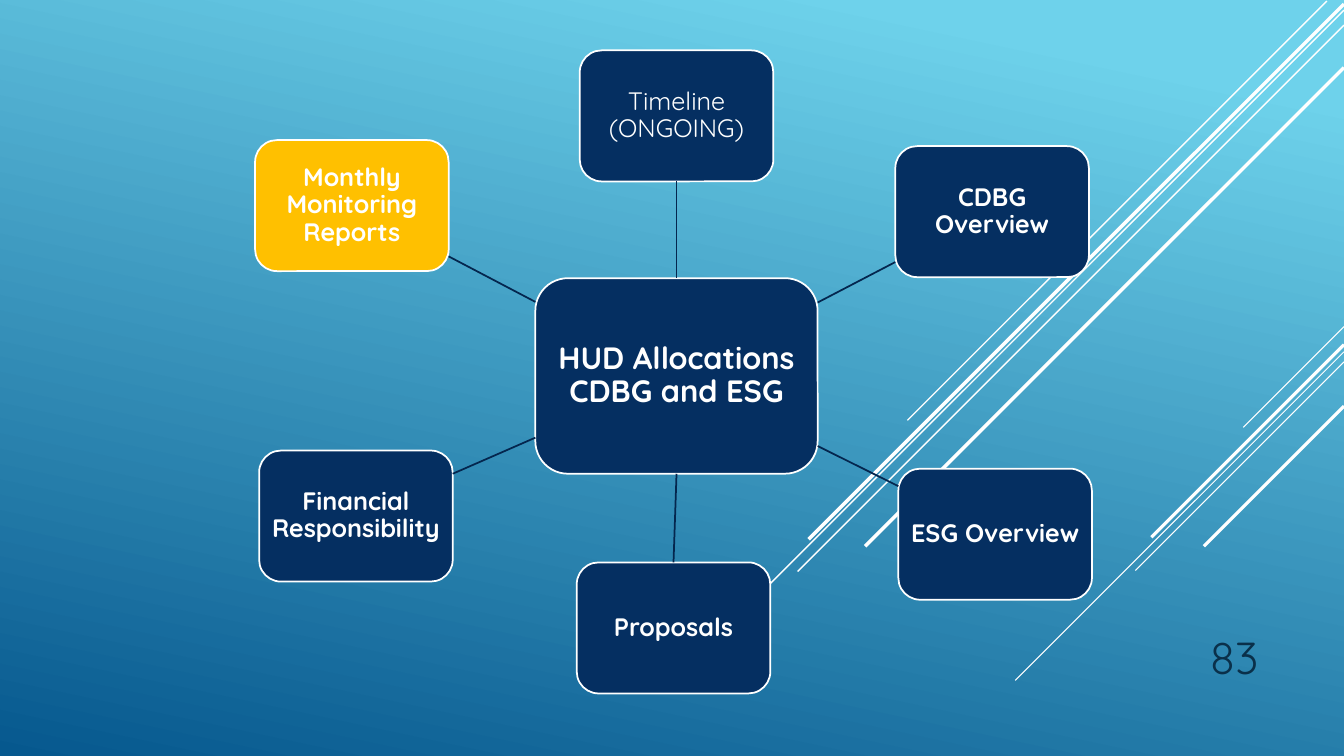
import pptx
import pptx.util
import pptx.dml.color
import pptx.enum.shapes
import pptx.enum.text
import pptx.oxml.ns
import lxml.etree

Inches, Pt = pptx.util.Inches, pptx.util.Pt
THEME = {
    "font": "Quicksand", "white": "FFFFFF", "navy": "052F61", "gold": "FFC000",
    "spoke": "04264E", "number": "0A304A", "sky": "6ED2EB", "deep": "06588E",
    "hub_size": 22, "topic_size": 18, "number_size": 32, "outline": 1.25,
}


def color(name):
    return pptx.dml.color.RGBColor.from_string(THEME[name])


def add_line(start, end, color_name, weight):
    line = page.shapes.add_connector(
        pptx.enum.shapes.MSO_CONNECTOR.STRAIGHT,
        *[Inches(length) for length in (*start, *end)])
    line.line.color.rgb = color(color_name)
    line.line.width = Pt(weight)
    lxml.etree.SubElement(line._element.spPr, pptx.oxml.ns.qn("a:effectLst"))
    return line


deck = pptx.Presentation()
deck.slide_width, deck.slide_height = Inches(13.33), Inches(7.5)
page = deck.slides.add_slide(deck.slide_layouts[6])

# Background gradient
backdrop = page.background.fill
backdrop.gradient()
backdrop.gradient_angle = 258
for stop, (position, name) in zip(backdrop.gradient_stops, [(0.1, "sky"), (1, "deep")]):
    stop.position = position
    stop.color.rgb = color(name)

# Diagonal rays, all falling at 45 degrees: right end x, y, drop, weight
rays = [
    (13.33, 3.24, 1.00, 0.75), (13.33, 3.49, 3.26, 0.75), (13.33, 3.59, 2.07, 0.75),
    (13.33, 3.42, 1.91, 2.25), (13.33, 4.03, 1.39, 2.25),
    (13.16, 0.01, 4.16, 1), (13.33, 0.10, 6.65, 1), (13.33, 0.25, 5.42, 1),
    (13.33, 0.04, 5.31, 2.5), (13.33, 0.67, 4.75, 2.5),
]
for x, y, drop, weight in rays:
    add_line((x, y), (x - drop, y + drop), "white", weight)

# Slide number
number_box = page.shapes.add_textbox(Inches(11.33), Inches(6.1), Inches(1.25), Inches(0.73))
number_box.text_frame.word_wrap = True
number_box.text_frame.vertical_anchor = pptx.enum.text.MSO_ANCHOR.BOTTOM
para = number_box.text_frame.paragraphs[0]
para.text = "83"
para.alignment = pptx.enum.text.PP_ALIGN.RIGHT
para.font.name, para.font.size = THEME["font"], Pt(THEME["number_size"])
para.font.color.rgb = color("number")

# Hub and topics: text, centre x, centre y, fill, bold
hub_center, hub_size, topic_size = (6.71, 3.73), (2.8, 1.94), (1.92, 1.3)
nodes = [
    ("HUD Allocations CDBG and ESG", *hub_center, "navy", True),
    ("Timeline (ONGOING)", 6.71, 1.15, "navy", False),
    ("CDBG Overview", 9.84, 2.1, "navy", True),
    ("ESG Overview", 9.87, 5.3, "navy", True),
    ("Proposals", 6.68, 6.23, "navy", True),
    ("Financial Responsibility", 3.53, 5.12, "navy", True),
    ("Monthly Monitoring Reports", 3.49, 2.04, "gold", True),
]
boxes = []
for text, x, y, fill, bold in nodes:
    is_hub = not boxes
    width, height = hub_size if is_hub else topic_size
    box = page.shapes.add_shape(
        pptx.enum.shapes.MSO_SHAPE.ROUNDED_RECTANGLE,
        Inches(x - width / 2), Inches(y - height / 2), Inches(width), Inches(height))
    box.shadow.inherit = False
    box.fill.solid()
    box.fill.fore_color.rgb = color(fill)
    box.line.color.rgb = color("white")
    box.line.width = Pt(THEME["outline"])
    frame = box.text_frame
    frame.word_wrap = True
    frame.vertical_anchor = pptx.enum.text.MSO_ANCHOR.MIDDLE
    inset = Inches(0.06 if is_hub else 0.05)
    frame.margin_left = frame.margin_right = frame.margin_top = frame.margin_bottom = inset
    para = frame.paragraphs[0]
    para.text = text
    para.alignment = pptx.enum.text.PP_ALIGN.CENTER
    para.line_spacing = 0.9
    para.font.name, para.font.bold = THEME["font"], bold
    para.font.size = Pt(THEME["hub_size" if is_hub else "topic_size"])
    para.font.color.rgb = color("white")
    boxes.append(box)

# Spokes run from centre to centre, cut off at the sides of both boxes
for box, (text, x, y, *style) in zip(boxes[1:], nodes[1:]):
    run, rise = x - hub_center[0], y - hub_center[1]
    hub_share, topic_share = [
        min(size[0] / 2 / max(abs(run), 0.01), size[1] / 2 / abs(rise))
        for size in (hub_size, topic_size)]
    start = (hub_center[0] + run * hub_share, hub_center[1] + rise * hub_share)
    end = (x - run * topic_share, y - rise * topic_share)
    spoke = add_line(start, end, "spoke", THEME["outline"])
    if abs(run) < 0.1:  # the topics straight above and below the hub
        spoke.begin_connect(boxes[0], 0 if rise < 0 else 2)
        spoke.end_connect(box, 2 if rise < 0 else 0)

deck.save("out.pptx")
